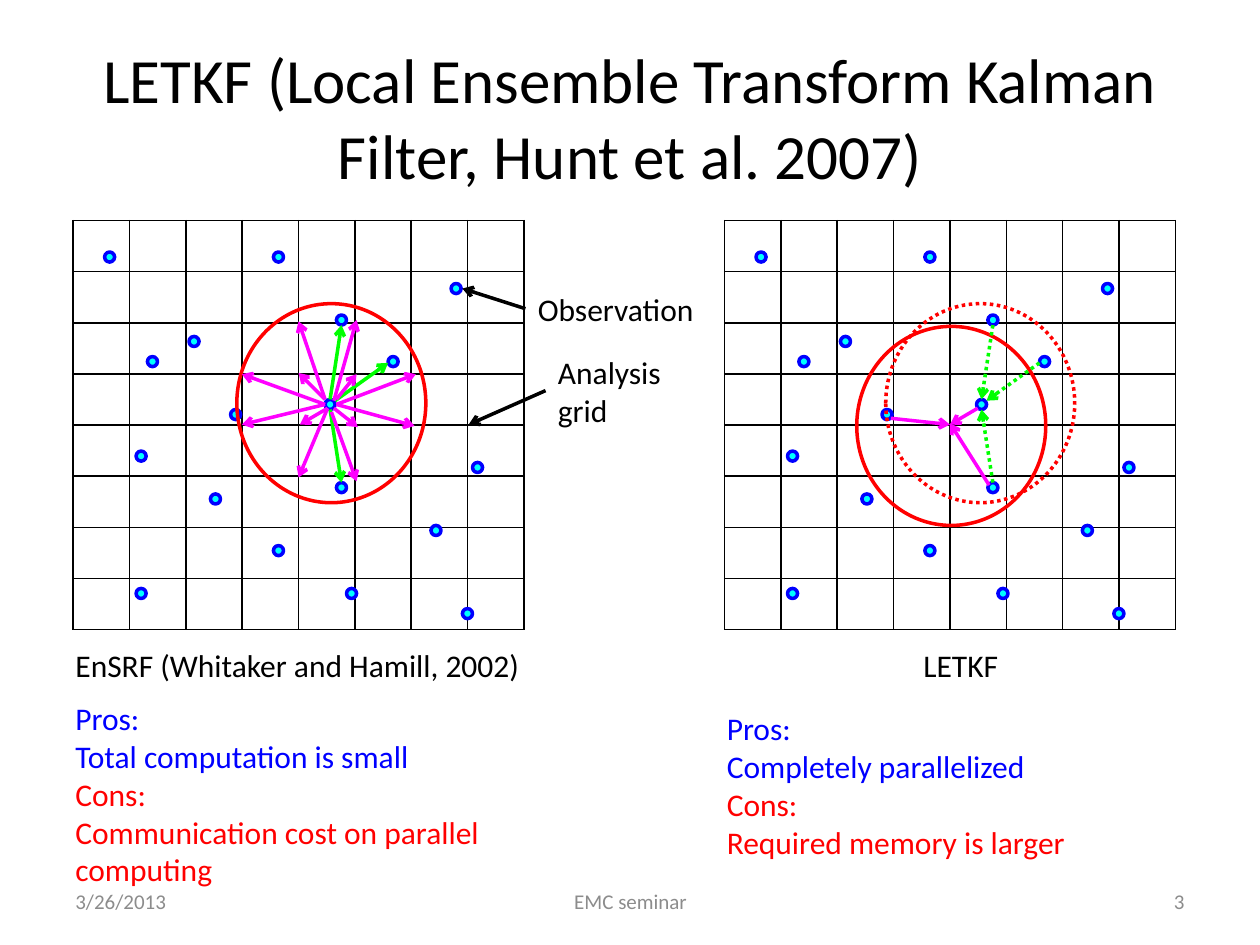
from typing import NamedTuple

from lxml.etree import SubElement
from pptx import Presentation
from pptx.dml.color import RGBColor
from pptx.enum.dml import MSO_LINE
from pptx.enum.shapes import MSO_CONNECTOR, MSO_SHAPE
from pptx.enum.text import MSO_ANCHOR, PP_ALIGN
from pptx.oxml.ns import qn
from pptx.util import Inches, Pt

FONT = "Calibri"
BLACK, GRAY, RED, BLUE = "000000", "8C8C8C", "FF0000", "0000FF"
CYAN, GREEN, MAGENTA = "00FFFF", "00FF00", "FF00FF"
GRID_N, GRID_W, GRID_H, GRID_TOP = 8, 3.58, 3.25, 1.75
LEFT_X, RIGHT_X = 0.58, 5.75
SHIFT = RIGHT_X - LEFT_X
DOT = 0.08


class Arrow(NamedTuple):
    x1: float
    y1: float
    x2: float
    y2: float


class Label(NamedTuple):
    x: float
    y: float
    w: float
    h: float
    lines: list[tuple[str, str]]
    size: int = 18
    align: PP_ALIGN = PP_ALIGN.LEFT
    anchor: MSO_ANCHOR = MSO_ANCHOR.TOP


# Observation positions in the left grid (top-left corner of each dot)
OBSERVATIONS = [
    (0.83, 2), (2.17, 2), (1.17, 2.83), (3.08, 2.83), (1.5, 2.67), (1.08, 3.58),
    (2.67, 2.5), (1.83, 3.25), (2.58, 3.17), (1.08, 4.67), (3.58, 2.25), (2.67, 3.83),
    (2.17, 4.33), (3.75, 3.67), (2.75, 4.67), (3.42, 4.17), (1.67, 3.92), (3.67, 4.83),
]
# Central observation to its neighbours
TO_OBSERVATIONS = [
    Arrow(2.62, 3.17, 2.71, 2.58),
    Arrow(2.66, 3.18, 3.08, 2.88),
    Arrow(2.62, 3.25, 2.71, 3.83),
]
# Central observation to the surrounding grid points
TO_GRID = [
    Arrow(2.58, 3.17, 2.37, 2.96), Arrow(2.6, 3.24, 2.38, 3.37),
    Arrow(2.65, 3.24, 2.84, 3.39), Arrow(2.67, 3.17, 2.83, 2.97),
    Arrow(2.58, 3.17, 2.37, 2.55), Arrow(2.65, 3.18, 2.83, 2.54),
    Arrow(2.67, 3.21, 3.3, 2.97), Arrow(2.67, 3.21, 3.29, 3.38),
    Arrow(2.63, 3.27, 2.83, 3.82), Arrow(2.6, 3.24, 2.37, 3.79),
    Arrow(2.58, 3.21, 1.92, 2.97), Arrow(2.58, 3.21, 1.92, 3.37),
]
# Observations to the analysed grid point on the right
TO_ANALYSIS = [
    Arrow(7.76, 3.24, 7.54, 3.37),
    Arrow(7.07, 3.32, 7.54, 3.37),
    Arrow(7.85, 3.85, 7.54, 3.36),
]
CALLOUTS = [Arrow(4.17, 2.45, 3.67, 2.29), Arrow(4.33, 3.1, 3.72, 3.37)]

LABELS = [
    Label(0.5, 5.08, 3.75, 0.4, [("EnSRF (Whitaker and Hamill, 2002)", BLACK)]),
    Label(6.5, 5.08, 2.25, 0.42, [("LETKF", BLACK)], align=PP_ALIGN.CENTER),
    Label(0.5, 5.5, 3.67, 1.62, [
        ("Pros:", BLUE), ("Total computation is small", BLUE),
        ("Cons:", RED), ("Communication cost on parallel computing", RED)]),
    Label(5.67, 5.58, 4, 1.31, [
        ("Pros:", BLUE), ("Completely parallelized", BLUE),
        ("Cons:", RED), ("Required memory is larger", RED)]),
    Label(4.17, 2.25, 1.5, 0.4, [("Observation", BLACK)]),
    Label(4.33, 2.75, 1.33, 0.71, [("Analysis grid", BLACK)]),
    Label(0.5, 6.95, 2.33, 0.4, [("3/26/2013", GRAY)], 12, anchor=MSO_ANCHOR.MIDDLE),
    Label(7.17, 6.95, 2.33, 0.4, [("3", GRAY)], 12, PP_ALIGN.RIGHT, MSO_ANCHOR.MIDDLE),
    Label(3.42, 6.95, 3.17, 0.4, [("EMC seminar", GRAY)], 12, PP_ALIGN.CENTER,
          MSO_ANCHOR.MIDDLE),
]


def rgb(color: str) -> RGBColor:
    return RGBColor.from_string(color)


def set_line(line, color: str, dotted: bool = False) -> None:
    line.color.rgb = rgb(color)
    line.width = Pt(2)
    if dotted:
        line.dash_style = MSO_LINE.ROUND_DOT


def add_border(cell) -> None:
    tc_pr = cell._tc.get_or_add_tcPr()
    for side in ("a:lnL", "a:lnR", "a:lnT", "a:lnB"):
        ln = SubElement(tc_pr, qn(side), w=str(Pt(1)))
        fill = SubElement(ln, qn("a:solidFill"))
        SubElement(fill, qn("a:srgbClr"), val=BLACK)


def add_grid(s, x: float) -> None:
    table = s.shapes.add_table(GRID_N, GRID_N, Inches(x), Inches(GRID_TOP),
                               Inches(GRID_W), Inches(GRID_H)).table
    table.first_row = table.horz_banding = False
    for cell in table.iter_cells():
        cell.margin_top = cell.margin_bottom = 0
        add_border(cell)
        cell.fill.background()


def add_ellipse(s, x: float, y: float, w: float, h: float, color: str,
                fill: str | None = None, dotted: bool = False) -> None:
    sp = s.shapes.add_shape(MSO_SHAPE.OVAL, Inches(x), Inches(y), Inches(w), Inches(h))
    sp.shadow.inherit = False
    if fill:
        sp.fill.solid()
        sp.fill.fore_color.rgb = rgb(fill)
    else:
        sp.fill.background()
    set_line(sp.line, color, dotted)


def add_panel(s, dx: float) -> None:
    add_grid(s, LEFT_X + dx)
    for x, y in OBSERVATIONS:
        add_ellipse(s, x + dx, y, DOT, DOT, BLUE, CYAN)


def add_radius(s, x: float, y: float, dotted: bool = False) -> None:
    add_ellipse(s, x, y, 1.5, 1.58, RED, dotted=dotted)


def add_arrow(s, a: Arrow, color: str, dotted: bool = False) -> None:
    sp = s.shapes.add_connector(MSO_CONNECTOR.STRAIGHT, *map(Inches, a))
    set_line(sp.line, color, dotted)
    SubElement(sp.line._get_or_add_ln(), qn("a:tailEnd"), type="arrow")
    SubElement(sp._element.spPr, qn("a:effectLst"))


def add_label(s, label: Label) -> None:
    box = s.shapes.add_textbox(*map(Inches, label[:4]))
    tf = box.text_frame
    tf.word_wrap = True
    tf.vertical_anchor = label.anchor
    for i, (text, color) in enumerate(label.lines):
        p = tf.add_paragraph() if i else tf.paragraphs[0]
        p.text = text
        p.alignment = label.align
        p.font.name = FONT
        p.font.size = Pt(label.size)
        p.font.color.rgb = rgb(color)


def add_title(s, text: str) -> None:
    title = s.shapes.title
    title.left, title.top, title.width, title.height = map(Inches, (0.5, 0.3, 9, 1.25))
    tf = title.text_frame
    tf.text = text
    tf.vertical_anchor = MSO_ANCHOR.MIDDLE
    p = tf.paragraphs[0]
    p.alignment = PP_ALIGN.CENTER
    p.font.name = FONT
    p.font.size = Pt(36)
    p.font.color.rgb = rgb(BLACK)


def main() -> None:
    prs = Presentation()
    prs.slide_width, prs.slide_height = Inches(10), Inches(7.5)
    s = prs.slides.add_slide(prs.slide_layouts[5])
    add_title(s, "LETKF (Local Ensemble Transform Kalman Filter, Hunt et al. 2007)")

    # Grids with observations
    add_panel(s, 0)
    add_panel(s, SHIFT)

    # EnSRF: one observation updates its neighbours
    add_radius(s, 1.88, 2.41)
    for a in TO_OBSERVATIONS:
        add_arrow(s, a, GREEN)
    for a in TO_GRID:
        add_arrow(s, a, MAGENTA)

    # LETKF: one grid point gathers its observations
    add_radius(s, 6.8, 2.59)
    for a in TO_ANALYSIS:
        add_arrow(s, a, MAGENTA)
    add_radius(s, 7.03, 2.41, dotted=True)
    for a in TO_OBSERVATIONS:
        inward = Arrow(a.x2 + SHIFT, a.y2, a.x1 + SHIFT, a.y1)
        add_arrow(s, inward, GREEN, dotted=True)

    # Captions, callouts and footer
    for label in LABELS:
        add_label(s, label)
    for a in CALLOUTS:
        add_arrow(s, a, BLACK)
    prs.save("out.pptx")


if __name__ == "__main__":
    main()
